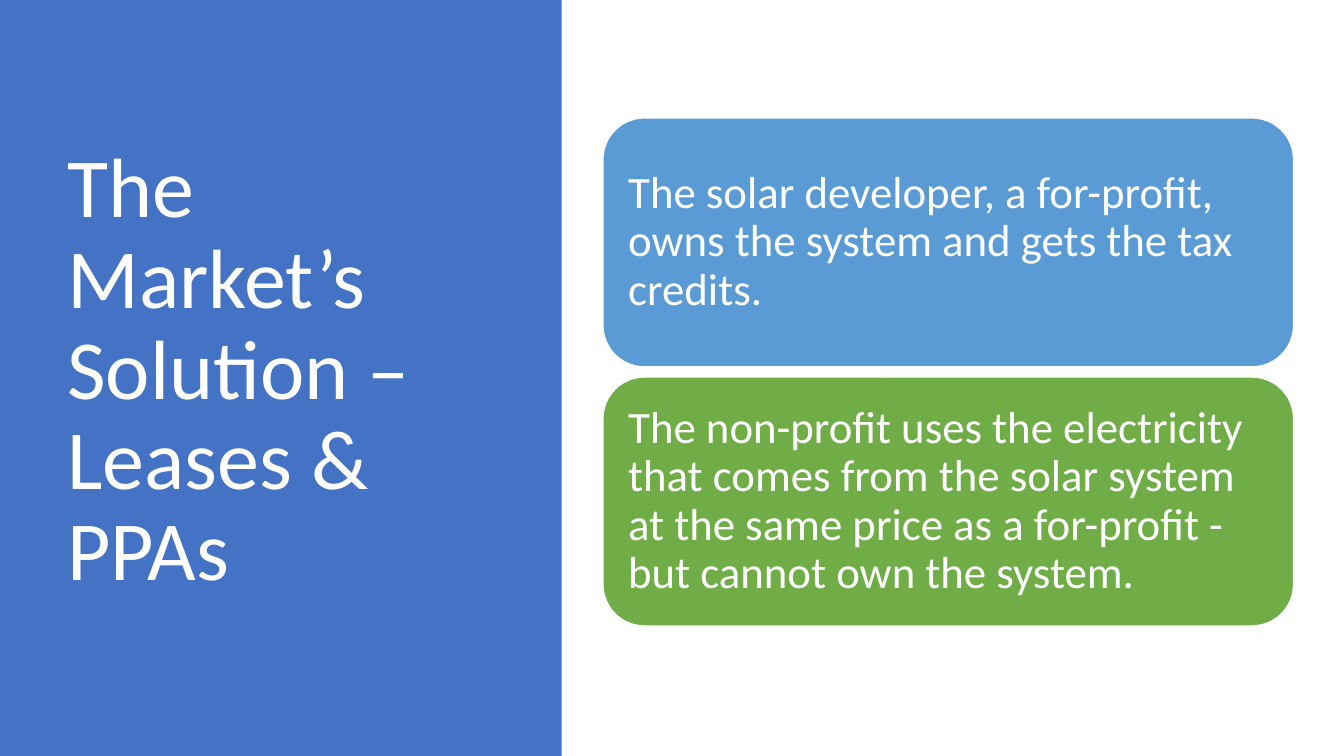
"""Build the slide on leases and PPAs as the market's solution."""
from pptx import Presentation
from pptx import util as u
from pptx.dml.color import RGBColor
from pptx.enum import shapes, text

WHITE = RGBColor(0xFF, 0xFF, 0xFF)
NAVY = RGBColor(0x44, 0x72, 0xC4)
BLUE = RGBColor(0x5B, 0x9B, 0xD5)
GREEN = RGBColor(0x70, 0xAD, 0x47)
FONT = "Calibri"

TITLE = "The Market’s Solution – Leases & PPAs"
CARDS = [
    ("The solar developer, a for-profit, owns the system and gets the tax credits.", BLUE),
    ("The non-profit uses the electricity that comes from the solar system "
     "at the same price as a for-profit - but cannot own the system.", GREEN),
]

WIDE, HIGH = 13.33, 7.5
LEFT, TOP, WIDTH, HEIGHT, GAP = 5.98, 1.17, 6.85, 2.47, 0.1


def add_box(slide, kind, place, fill):
    box = slide.shapes.add_shape(kind, *map(u.Inches, place))
    box.shadow.inherit = False
    box.fill.solid()
    box.fill.fore_color.rgb = fill
    box.line.fill.background()
    return box


def write(shape, words, size, pad):
    frame = shape.text_frame
    frame.word_wrap = True
    frame.vertical_anchor = text.MSO_ANCHOR.MIDDLE
    frame.margin_left = frame.margin_right = u.Inches(pad[0])
    frame.margin_top = frame.margin_bottom = u.Inches(pad[1])
    para = frame.paragraphs[0]
    para.alignment = text.PP_ALIGN.LEFT
    para.line_spacing = 0.9
    run = para.add_run()
    run.text = words
    run.font.name = FONT
    run.font.size = u.Pt(size)
    run.font.color.rgb = WHITE


def main():
    deck = Presentation()
    deck.slide_width, deck.slide_height = u.Inches(WIDE), u.Inches(HIGH)
    slide = deck.slides.add_slide(deck.slide_layouts[6])

    add_box(slide, shapes.MSO_SHAPE.RECTANGLE, (0, 0, 5.57, HIGH), NAVY)
    title = slide.shapes.add_textbox(*map(u.Inches, (0.57, 0.68, 4.16, 6.02)))
    write(title, TITLE, 60, (0.1, 0.05))

    for row, (words, fill) in enumerate(CARDS):
        place = (LEFT, TOP + row * (HEIGHT + GAP), WIDTH, HEIGHT)
        card = add_box(slide, shapes.MSO_SHAPE.ROUNDED_RECTANGLE, place, fill)
        card.line.color.rgb = WHITE
        card.line.width = u.Pt(1)
        write(card, words, 32, (0.13, 0.13))

    deck.save("out.pptx")


if __name__ == "__main__":
    main()
